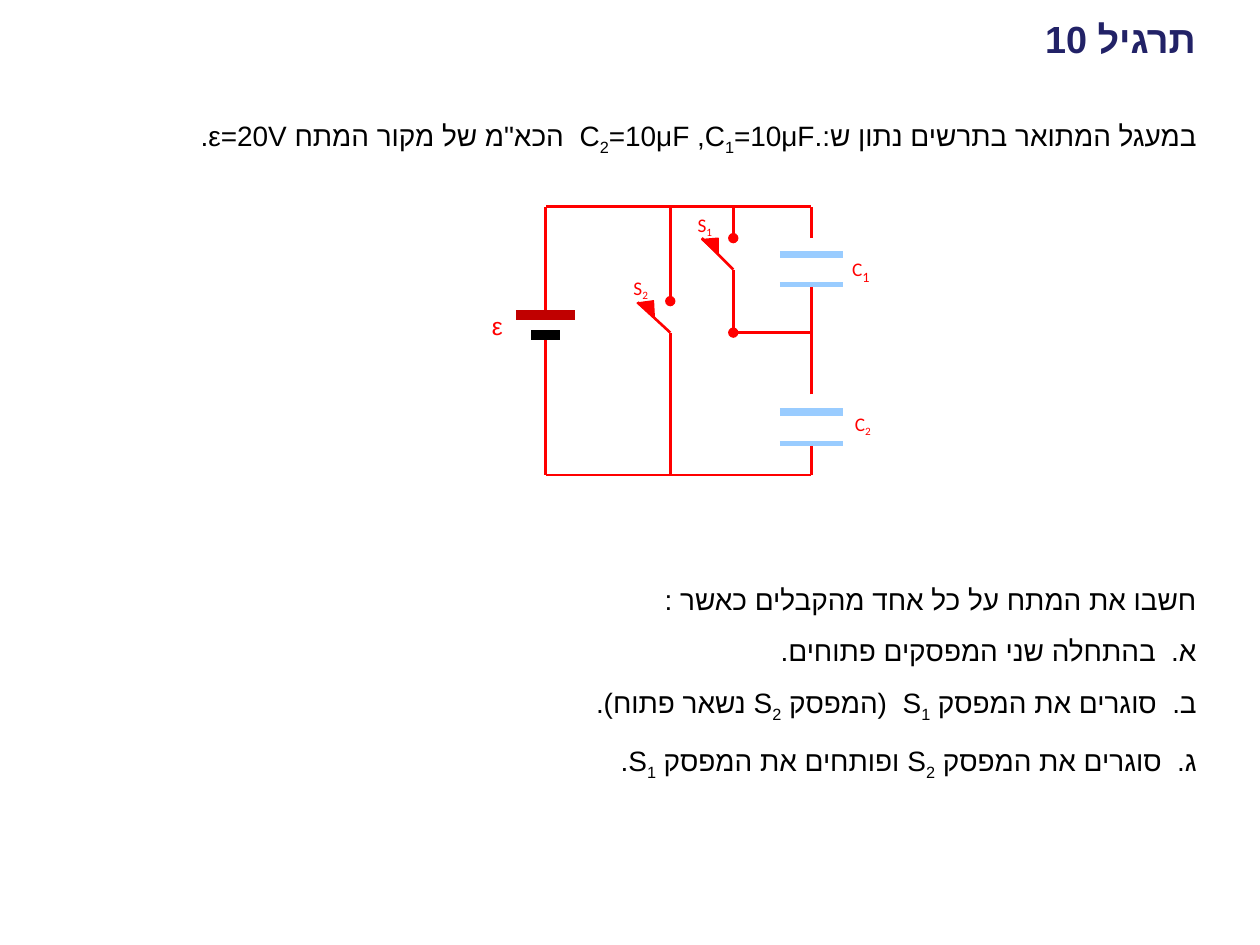
from lxml import etree
from pptx import Presentation
from pptx.dml.color import RGBColor
from pptx.enum.shapes import MSO_CONNECTOR, MSO_SHAPE
from pptx.enum.text import MSO_ANCHOR, PP_ALIGN
from pptx.oxml.ns import qn
from pptx.util import Inches, Pt

LINE = MSO_CONNECTOR.STRAIGHT
WEDGE = MSO_SHAPE.ISOSCELES_TRIANGLE
RIGHT = PP_ALIGN.RIGHT
MIDDLE = MSO_ANCHOR.MIDDLE

HEX = {"navy": "222267", "black": "000000", "red": "FF0000",
       "blue": "99CCFF", "plus": "C00000"}

# In all texts "_" lowers the one character that follows it.
TITLE = "תרגיל 10"
# text, line spacing, space before in points
BODY = [
    ("במעגל המתואר בתרשים נתון ש:.C_2=10μF ,C_1=10μF  הכא\"מ של מקור המתח ε=20V.", 1.7, 0),
    ("חשבו את המתח על כל אחד מהקבלים כאשר :", 1.7, 230),
    ("א.  בהתחלה שני המפסקים פתוחים.", 1.5, 0),
    ("ב.  סוגרים את המפסק S_1  (המפסק S_2 נשאר פתוח).", 1.5, 0),
    ("ג.  סוגרים את המפסק S_2 ופותחים את המפסק S_1.", 1.5, 0),
]

# Circuit columns and rails
CELL, SW2, SW1, CAP = 4.33, 5.32, 5.82, 6.44
TOP, NODE, BASE = 1.64, 2.64, 3.77

# from x, y, to x, y, end that carries a dot
WIRES = [
    (CAP, TOP, CELL, TOP, None),
    (CAP, BASE, CELL, BASE, None),
    (CELL, 2.47, CELL, TOP, None),
    (CELL, 2.66, CELL, BASE, None),
    (SW2, 2.39, SW2, TOP, "headEnd"),
    (SW2, NODE, SW2, BASE, None),
    (SW2, NODE, 5.06, 2.4, None),
    (SW1, TOP, SW1, 1.89, "tailEnd"),
    (SW1, 2.14, SW1, NODE, None),
    (SW1, 2.14, 5.57, 1.89, None),
    (SW1, NODE, CAP, NODE, "headEnd"),
    (CAP, 1.89, CAP, TOP, None),
    (CAP, 3.13, CAP, 2.27, None),
    (CAP, BASE, CAP, 3.52, None),
]
# middle x, y, length, width in points, colour
PLATES = [
    (CAP, 2.02, 0.5, 4.5, "blue"),
    (CAP, 2.26, 0.5, 3, "blue"),
    (CAP, 3.27, 0.5, 4.5, "blue"),
    (CAP, 3.52, 0.5, 3, "blue"),
    (CELL, 2.5, 0.47, 6, "plus"),
    (CELL, 2.66, 0.23, 6, "black"),
]
# left, top, turn
TIPS = [(5.57, 1.89, 270), (5.06, 2.39, 267.1)]
# text, box, font, size, size of the lowered character
LABELS = [
    ("ε", (3.59, 2.42, 0.5, 0.5), "Arial", 14, 14),
    ("C_1", (6.38, 1.95, 0.62, 0.38), "Calibri", 11, 14),
    ("S_2", (4.62, 2.14, 0.62, 0.5), "Calibri", 11, 11),
    ("S_1", (5.25, 1.64, 0.5, 0.38), "Calibri", 11, 11),
    ("C_2", (6.46, 3.22, 0.55, 0.38), "Calibri", 11, 11),
]


def color(key):
    return RGBColor.from_string(HEX[key])


def put(obj, form):
    for key, val in form.items():
        setattr(obj, key, val)


def place(shape, *box):
    put(shape, dict(zip(("left", "top", "width", "height"), map(Inches, box))))


def add_run(para, text, tone, form, low=False):
    run = para.add_run()
    run.text = text
    put(run.font, form)
    run.font.color.rgb = color(tone)
    props = run.font._element
    if low:
        props.set("baseline", "-25000")
    etree.SubElement(props, qn("a:cs")).set("typeface", form["name"])


def write(para, text, tone, form, form_low=None, **space):
    """Fill a right-to-left paragraph, lowering each character after "_"."""
    props = para._p.get_or_add_pPr()
    for key, val in {"rtl": "1", "marL": "0", "indent": "0"}.items():
        props.set(key, val)
    etree.SubElement(props, qn("a:buNone"))
    put(para, {"alignment": RIGHT, **space})
    first, *rest = text.split("_")
    add_run(para, first, tone, form)
    for part in rest:
        add_run(para, part[0], tone, form_low or form, True)
        if part[1:]:
            add_run(para, part[1:], tone, form)


def draw(group, x1, y1, x2, y2, width, tone, dot=None):
    line = group.shapes.add_connector(LINE, *map(Inches, (x1, y1, x2, y2)))
    line.line.width = Pt(width)
    line.line.color.rgb = color(tone)
    if dot:
        etree.SubElement(line.line._get_or_add_ln(), qn("a:" + dot)).set("type", "oval")
    etree.SubElement(line._element.spPr, qn("a:effectLst"))


def add_text(slide):
    title, body = slide.placeholders
    place(title, 1.19, 0.11, 8.4, 0.39)
    title.text_frame.vertical_anchor = MIDDLE
    write(title.text_frame.paragraphs[0], TITLE, "navy",
          {"name": "Arial", "size": Pt(21.6), "bold": True})
    place(body, 0.59, 0.68, 9.01, 6.6)
    frame = body.text_frame
    for i, (text, pitch, gap) in enumerate(BODY):
        para = frame.add_paragraph() if i else frame.paragraphs[0]
        write(para, text, "black", {"name": "Arial", "size": Pt(16)},
              line_spacing=pitch, space_before=Pt(gap))


def add_circuit(slide):
    group = slide.shapes.add_group_shape()
    for *ends, dot in WIRES:
        draw(group, *ends, 1.5, "red", dot)
    for x, y, size, width, tone in PLATES:
        draw(group, x - size / 2, y, x + size / 2, y, width, tone)
    for x, y, turn in TIPS:
        tip = group.shapes.add_shape(WEDGE, *map(Inches, (x, y, 0.13, 0.13)))
        tip.rotation = turn
        tip.adjustments[0] = 0.92
        tip.shadow.inherit = False
        tip.fill.solid()
        tip.fill.fore_color.rgb = tip.line.color.rgb = color("red")
        tip.line.width = Pt(0.75)
    for text, box, name, size, low in LABELS:
        frame = group.shapes.add_textbox(*map(Inches, box)).text_frame
        frame.word_wrap = True
        write(frame.paragraphs[0], text, "red", {"name": name, "size": Pt(size)},
              {"name": name, "size": Pt(low)}, space_after=Pt(10))


def main():
    deck = Presentation()
    put(deck, {"slide_width": Inches(10), "slide_height": Inches(7.5)})
    slide = deck.slides.add_slide(deck.slide_layouts[1])
    add_text(slide)
    add_circuit(slide)
    deck.save("out.pptx")


if __name__ == "__main__":
    main()
